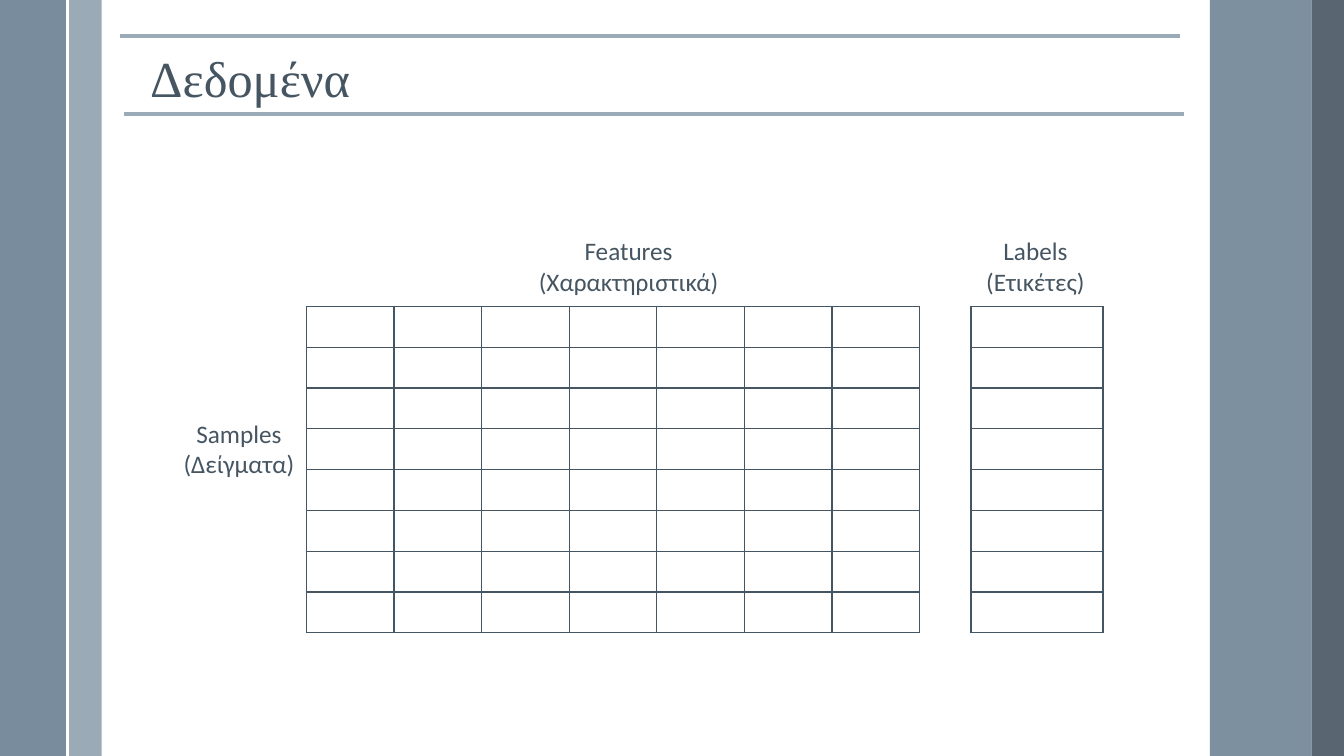
from dataclasses import dataclass

import lxml.etree
import pptx
import pptx.dml.color
import pptx.enum.dml
import pptx.enum.shapes
import pptx.enum.text
import pptx.oxml.ns
import pptx.slide
import pptx.util

Inches = pptx.util.Inches
Pt = pptx.util.Pt
qn = pptx.oxml.ns.qn

COLORS = {
    "text": "465562",
    "rule": "9BAAB7",
    "panel": "6A8093",
    "edge": "475562",
    "white": "FFFFFF",
}
SLIDE_WIDTH, SLIDE_HEIGHT = 13.33, 7.5
TABLE_TOP, TABLE_HEIGHT, SAMPLE_COUNT = 3.04, 3.24, 8
LABEL_HEIGHT = 0.57


@dataclass
class Band:
    left: float
    width: float
    color: str
    opacity: int = 100


@dataclass
class Rule:
    start: tuple[float, float]
    end: tuple[float, float]
    color: str
    weight: float


@dataclass
class Grid:
    left: float
    width: float
    columns: int


@dataclass
class Label:
    text: str
    left: float
    top: float
    width: float


BANDS = [
    Band(0.68, 0.33, "rule"),
    Band(0, 0.67, "panel", 90),
    Band(12, 1.01, "panel", 87),
    Band(13.01, 0.33, "edge", 90),
]
RULES = [
    Rule((0.67, 0), (0.67, SLIDE_HEIGHT), "white", 1.5),
    Rule((1.23, 1.13), (11.74, 1.13), "rule", 3),
    Rule((1.19, 0.36), (11.7, 0.36), "rule", 3),
]
GRIDS = [Grid(3.04, 6.08, 7), Grid(9.63, 1.31, 1)]
LABELS = [
    Label("Samples (Δείγματα)", 1.69, 4.1, 1.36),
    Label("Features (Χαρακτηριστικά)", 5.2, 2.29, 2.07),
    Label("Labels (Ετικέτες)", 9.59, 2.29, 1.36),
]


def rgb(name: str) -> pptx.dml.color.RGBColor:
    return pptx.dml.color.RGBColor.from_string(COLORS[name])


def add_band(slide: pptx.slide.Slide, band: Band) -> None:
    shape = slide.shapes.add_shape(
        pptx.enum.shapes.MSO_SHAPE.RECTANGLE,
        Inches(band.left), 0, Inches(band.width), Inches(SLIDE_HEIGHT),
    )
    shape.shadow.inherit = False
    shape.line.fill.background()
    shape.fill.solid()
    shape.fill.fore_color.rgb = rgb(band.color)
    if band.opacity < 100:
        color = shape.fill._xPr.find(f".//{qn('a:srgbClr')}")
        alpha = lxml.etree.SubElement(color, qn("a:alpha"))
        alpha.set("val", str(band.opacity * 1000))


def add_rule(slide: pptx.slide.Slide, rule: Rule) -> None:
    connector = slide.shapes.add_connector(
        pptx.enum.shapes.MSO_CONNECTOR.STRAIGHT,
        *map(Inches, rule.start + rule.end),
    )
    connector.line.color.rgb = rgb(rule.color)
    connector.line.width = Pt(rule.weight)
    lxml.etree.SubElement(connector._element.spPr, qn("a:effectLst"))


def add_grid(slide: pptx.slide.Slide, grid: Grid) -> None:
    table = slide.shapes.add_table(
        SAMPLE_COUNT, grid.columns, Inches(grid.left), Inches(TABLE_TOP),
        Inches(grid.width), Inches(TABLE_HEIGHT),
    ).table
    table.first_row = False
    table.horz_banding = False
    for cell in table.iter_cells():
        properties = cell._tc.get_or_add_tcPr()
        for side in ("L", "R", "T", "B"):
            border = lxml.etree.SubElement(properties, qn(f"a:ln{side}"))
            border.set("w", str(Pt(1)))
            fill = lxml.etree.SubElement(border, qn("a:solidFill"))
            color = lxml.etree.SubElement(fill, qn("a:srgbClr"))
            color.set("val", COLORS["text"])
        cell.fill.background()


def add_label(slide: pptx.slide.Slide, label: Label) -> None:
    shape = slide.shapes.add_textbox(
        *map(Inches, (label.left, label.top, label.width, LABEL_HEIGHT))
    )
    frame = shape.text_frame
    frame.word_wrap = True
    frame.auto_size = pptx.enum.text.MSO_AUTO_SIZE.SHAPE_TO_FIT_TEXT
    paragraph = frame.paragraphs[0]
    paragraph.text = label.text
    paragraph.alignment = pptx.enum.text.PP_ALIGN.CENTER
    paragraph.font.name = "Calibri"
    paragraph.font.size = Pt(18)
    paragraph.font.color.rgb = rgb("text")


def format_title(slide: pptx.slide.Slide, text: str) -> None:
    title = slide.shapes.title
    title.left, title.top = Inches(1.39), Inches(0.41)
    title.width, title.height = Inches(10.32), Inches(0.71)
    frame = title.text_frame
    frame.auto_size = pptx.enum.text.MSO_AUTO_SIZE.SHAPE_TO_FIT_TEXT
    frame.vertical_anchor = pptx.enum.text.MSO_ANCHOR.MIDDLE
    paragraph = frame.paragraphs[0]
    paragraph.text = text
    paragraph.alignment = pptx.enum.text.PP_ALIGN.LEFT
    paragraph.font.name = "Times New Roman"
    paragraph.font.size = Pt(36)
    paragraph.font.color.rgb = rgb("text")


def main() -> None:
    presentation = pptx.Presentation()
    presentation.slide_width = Inches(SLIDE_WIDTH)
    presentation.slide_height = Inches(SLIDE_HEIGHT)
    slide = presentation.slides.add_slide(presentation.slide_layouts[5])

    # Side bands and rules
    for band in BANDS:
        add_band(slide, band)
    for rule in RULES:
        add_rule(slide, rule)

    # Title
    format_title(slide, "Δεδομένα")

    # Feature and label tables with their captions
    for grid in GRIDS:
        add_grid(slide, grid)
    for label in LABELS:
        add_label(slide, label)

    presentation.save("out.pptx")


if __name__ == "__main__":
    main()
